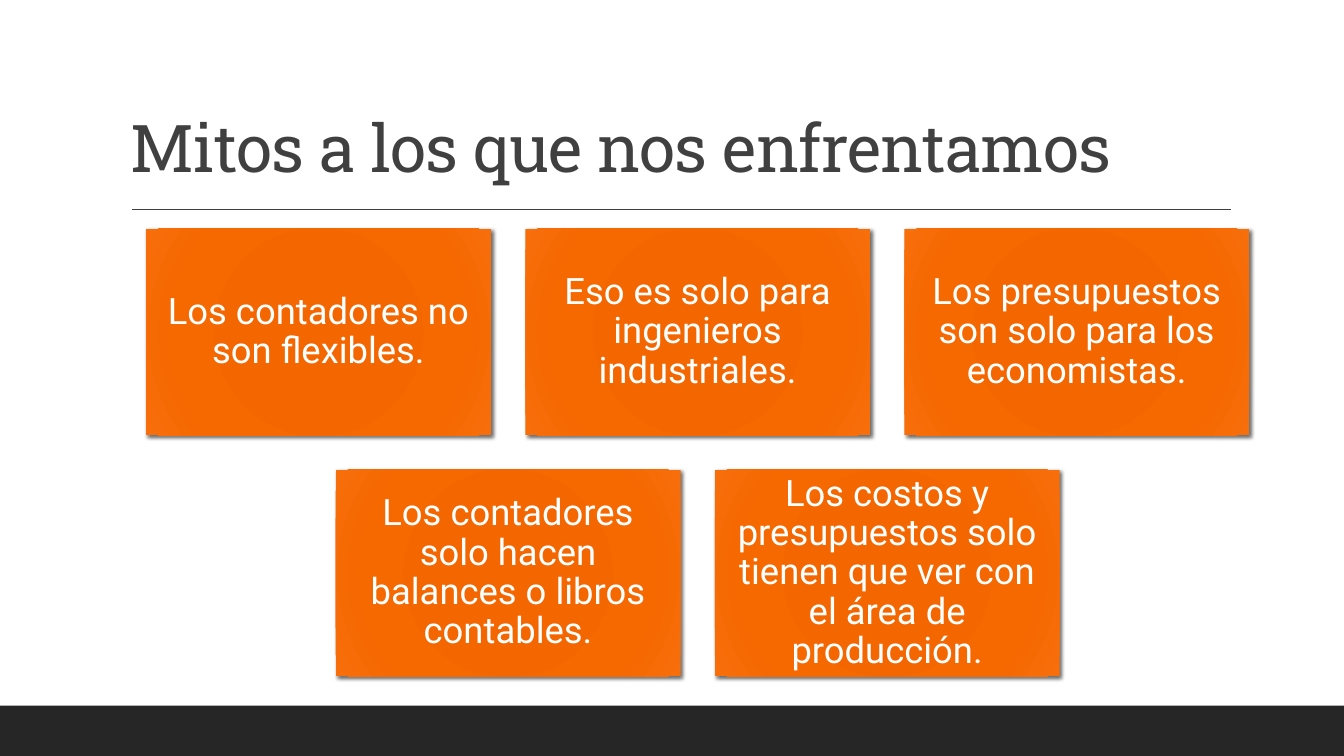
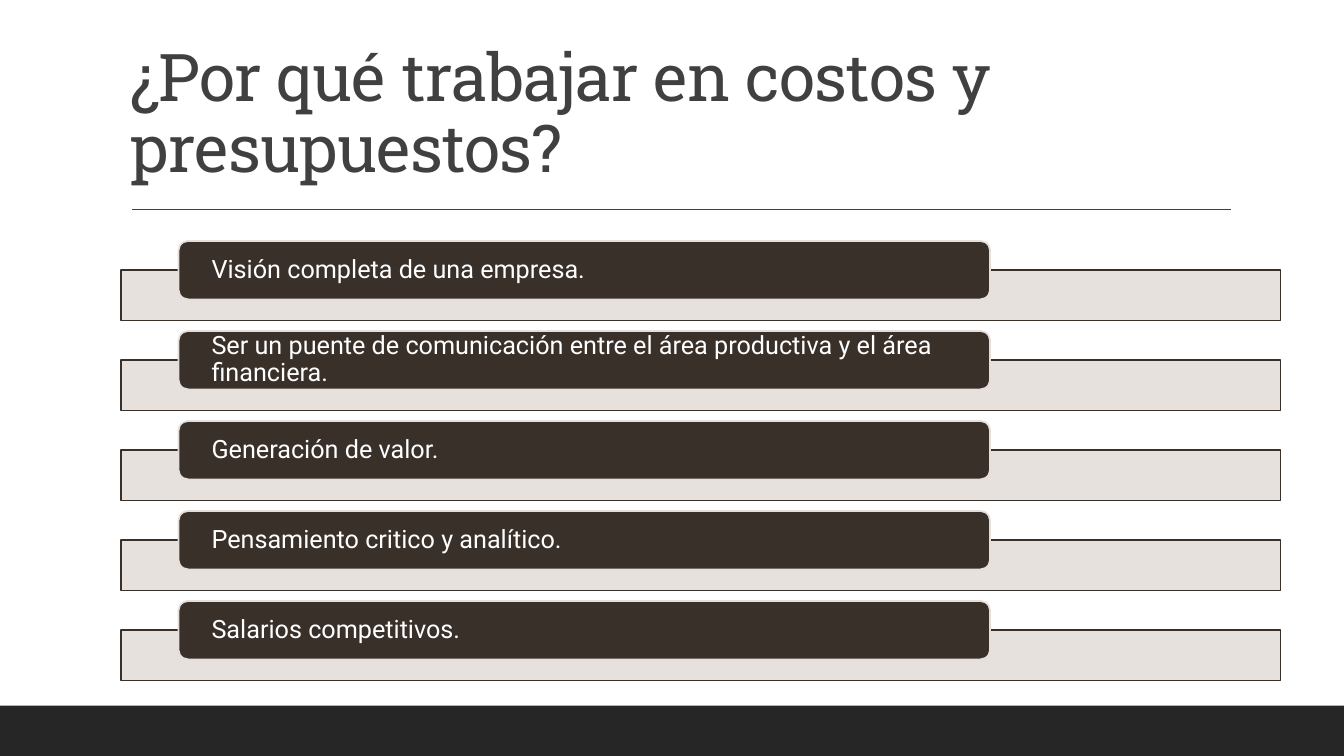
from dataclasses import dataclass

import lxml.etree
import pptx
import pptx.dml.color
import pptx.enum.shapes
import pptx.enum.text
import pptx.oxml
import pptx.oxml.ns
import pptx.util

Inches = pptx.util.Inches
Pt = pptx.util.Pt
qn = pptx.oxml.ns.qn
SHAPES = pptx.enum.shapes.MSO_SHAPE
ALIGN = pptx.enum.text.PP_ALIGN
ANCHOR = pptx.enum.text.MSO_ANCHOR

MYTHS_TITLE = "Mitos a los que nos enfrentamos"
MYTH_ROWS = [
    ["Los contadores no son flexibles.",
     "Eso es solo para ingenieros industriales.",
     "Los presupuestos son solo para los economistas."],
    ["Los contadores solo hacen balances o libros contables.",
     "Los costos y presupuestos solo tienen que ver con el área de producción."],
]
REASONS_TITLE = "¿Por qué trabajar en costos y presupuestos?"
REASONS = [
    "Visión completa de una empresa.",
    "Ser un puente de comunicación entre el área productiva y el área financiera.",
    "Generación de valor.",
    "Pensamiento critico y analítico.",
    "Salarios competitivos.",
]


@dataclass(frozen=True)
class Theme:
    heading_font: str = "Roboto Slab"
    body_font: str = "Roboto"
    heading_size: float = 47
    card_size: float = 26
    reason_size: float = 18
    heading: str = "404040"
    footer: str = "262626"
    dark: str = "39302A"
    pale: str = "E5DEDB"
    white: str = "FFFFFF"
    card_stops: tuple = ((0, "F06500"), (34, "F36600"), (70, "F66800"), (100, "F76E0B"))


THEME = Theme()
SLIDE_WIDTH, SLIDE_HEIGHT = 13.33, 7.5
FOOTER_HEIGHT = 0.5
CARD_WIDTH, CARD_HEIGHT, CARD_GAP = 3.42, 2.05, 0.34
CARDS_CENTER, CARDS_TOP = 6.92, 2.27
BAR_LEFT, BAR_TOP, BAR_WIDTH, BAR_HEIGHT = 1.2, 2.68, 11.5, 0.5
LABEL_LEFT, LABEL_WIDTH, LABEL_HEIGHT, LABEL_RISE = 1.77, 8.05, 0.58, 0.29
REASON_PITCH = 0.893


def rgb(color):
    return pptx.dml.color.RGBColor.from_string(color)


def add_box(slide, kind, box, fill, line=None):
    shape = slide.shapes.add_shape(kind, *map(Inches, box))
    shape.shadow.inherit = False
    shape.fill.solid()
    shape.fill.fore_color.rgb = rgb(fill)
    if line:
        shape.line.color.rgb = rgb(line)
        shape.line.width = Pt(1.25)
    else:
        shape.line.fill.background()
    return shape


def write(shape, text, font, size, color, align, anchor, insets):
    """Fill the shape with one run; insets are horizontal and vertical."""
    frame = shape.text_frame
    frame.word_wrap = True
    frame.vertical_anchor = anchor
    frame.margin_left = frame.margin_right = Inches(insets[0])
    frame.margin_top = frame.margin_bottom = Inches(insets[1])
    paragraph = frame.paragraphs[0]
    paragraph.alignment = align
    paragraph.line_spacing = 0.9
    run = paragraph.add_run()
    run.text = text
    run.font.name = font
    run.font.size = Pt(size)
    run.font.color.rgb = rgb(color)
    return run


def add_base_slide(presentation, title):
    """Add a slide with the shared footer band, rule and title."""
    slide = presentation.slides.add_slide(presentation.slide_layouts[6])
    footer_top = SLIDE_HEIGHT - FOOTER_HEIGHT
    add_box(slide, SHAPES.RECTANGLE, (0, footer_top, SLIDE_WIDTH, FOOTER_HEIGHT), THEME.footer)
    rule = slide.shapes.add_connector(
        pptx.enum.shapes.MSO_CONNECTOR.STRAIGHT,
        Inches(1.31), Inches(2.08), Inches(12.21), Inches(2.08))
    rule.line.color.rgb = rgb(THEME.heading)
    rule.line.width = Pt(1)
    lxml.etree.SubElement(rule.element.spPr, qn("a:effectLst"))
    heading = slide.shapes.add_textbox(Inches(1.2), Inches(0.31), Inches(11), Inches(1.59))
    run = write(heading, title, THEME.heading_font, THEME.heading_size, THEME.heading,
                ALIGN.LEFT, ANCHOR.BOTTOM, (0.1, 0.05))
    run.font._element.set("spc", "-50")
    return slide


def style_card(shape):
    """Give the card its radial gradient and soft shadow."""
    stops = "".join(
        f'<a:gs pos="{position * 1000}"><a:srgbClr val="{color}"/></a:gs>'
        for position, color in THEME.card_stops)
    namespace = pptx.oxml.ns.nsdecls("a")
    gradient = pptx.oxml.parse_xml(
        f'<a:gradFill {namespace} rotWithShape="1"><a:gsLst>{stops}</a:gsLst>'
        '<a:path path="circle"><a:fillToRect l="100000" t="100000" r="100000" b="100000"/>'
        '</a:path></a:gradFill>')
    shadow = pptx.oxml.parse_xml(
        f'<a:outerShdw {namespace} blurRad="{Pt(3)}" dist="{Pt(2)}" dir="2700000" '
        'algn="tl" rotWithShape="0"><a:srgbClr val="000000"><a:alpha val="60000"/>'
        '</a:srgbClr></a:outerShdw>')
    properties = shape.element.spPr
    properties.replace(properties.find(qn("a:solidFill")), gradient)
    properties.find(qn("a:effectLst")).append(shadow)


def add_myth_cards(slide):
    for row, myths in enumerate(MYTH_ROWS):
        row_width = len(myths) * (CARD_WIDTH + CARD_GAP) - CARD_GAP
        left = CARDS_CENTER - row_width / 2
        top = CARDS_TOP + row * (CARD_HEIGHT + CARD_GAP)
        for column, myth in enumerate(myths):
            box = (left + column * (CARD_WIDTH + CARD_GAP), top, CARD_WIDTH, CARD_HEIGHT)
            card = add_box(slide, SHAPES.RECTANGLE, box, THEME.card_stops[0][1])
            style_card(card)
            write(card, myth, THEME.body_font, THEME.card_size, THEME.white,
                  ALIGN.CENTER, ANCHOR.MIDDLE, (0.11, 0.11))


def add_reasons(slide):
    for index, reason in enumerate(REASONS):
        top = BAR_TOP + index * REASON_PITCH
        bar = add_box(slide, SHAPES.RECTANGLE, (BAR_LEFT, top, BAR_WIDTH, BAR_HEIGHT),
                      THEME.pale, THEME.dark)
        bar_color = bar.element.spPr.find(qn("a:solidFill"))[0]
        lxml.etree.SubElement(bar_color, qn("a:alpha"), val="90000")
        label = add_box(slide, SHAPES.ROUNDED_RECTANGLE,
                        (LABEL_LEFT, top - LABEL_RISE, LABEL_WIDTH, LABEL_HEIGHT),
                        THEME.dark, THEME.pale)
        write(label, reason, THEME.body_font, THEME.reason_size, THEME.white,
              ALIGN.LEFT, ANCHOR.MIDDLE, (0.3, 0))


def main():
    presentation = pptx.Presentation()
    presentation.slide_width = Inches(SLIDE_WIDTH)
    presentation.slide_height = Inches(SLIDE_HEIGHT)
    add_myth_cards(add_base_slide(presentation, MYTHS_TITLE))
    add_reasons(add_base_slide(presentation, REASONS_TITLE))
    presentation.save("out.pptx")


if __name__ == "__main__":
    main()
